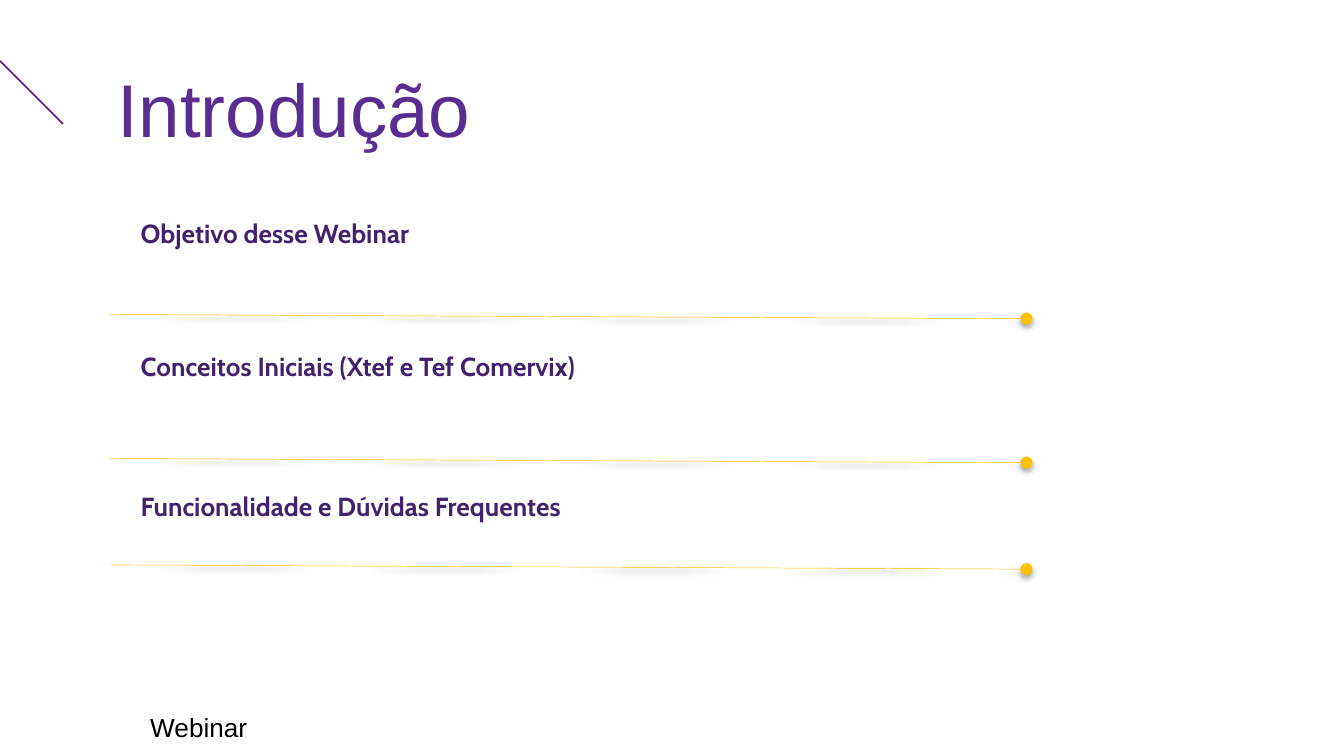
from dataclasses import dataclass

from lxml import etree
from pptx import Presentation
from pptx.dml.color import RGBColor
from pptx.enum.shapes import MSO_CONNECTOR, MSO_SHAPE
from pptx.enum.text import MSO_ANCHOR
from pptx.oxml.ns import qn
from pptx.util import Cm, Pt

STRAIGHT = MSO_CONNECTOR.STRAIGHT
OVAL = MSO_SHAPE.OVAL
TOP, MIDDLE = MSO_ANCHOR.TOP, MSO_ANCHOR.MIDDLE
BLANK_LAYOUT = 6


@dataclass(frozen=True)
class Theme:
    purple: RGBColor = RGBColor(0x5A, 0x2D, 0x91)
    dark_purple: RGBColor = RGBColor(0x43, 0x22, 0x6D)
    yellow: RGBColor = RGBColor(0xFF, 0xC0, 0x00)
    black: RGBColor = RGBColor(0, 0, 0)
    title_size: Pt = Pt(40)
    text_size: Pt = Pt(14)


theme = Theme()
title_format = {"name": "Arial", "size": theme.title_size, "color": theme.purple}
topic_format = {"name": "Cabin", "size": theme.text_size, "bold": True,
                "color": theme.dark_purple}
footer_format = {"name": "Arial", "size": theme.text_size, "color": theme.black}

presentation = Presentation()
presentation.slide_width, presentation.slide_height = Cm(25.4), Cm(14.28)
slide = presentation.slides.add_slide(presentation.slide_layouts[BLANK_LAYOUT])


def add_text(text, left, top, width, height, font_format, anchor=TOP):
    box = slide.shapes.add_textbox(Cm(left), Cm(top), Cm(width), Cm(height))
    box.text_frame.word_wrap = True
    box.text_frame.vertical_anchor = anchor
    paragraph = box.text_frame.paragraphs[0]
    paragraph.text = text
    font = paragraph.runs[0].font
    for attribute, value in font_format.items():
        if attribute == "color":
            font.color.rgb = value
        else:
            setattr(font, attribute, value)


def set_shadow(shape, distance=None, opacity=0):
    """Replace the inherited shadow; without a distance there is none."""
    properties = shape._element.spPr
    for old in properties.findall(qn("a:effectLst")):
        properties.remove(old)
    effects = etree.SubElement(properties, qn("a:effectLst"))
    if distance is not None:
        shadow = etree.SubElement(effects, qn("a:outerShdw"), blurRad=str(Pt(3.1)),
                                  dist=str(Pt(distance)), dir="5400000", rotWithShape="0")
        color = etree.SubElement(shadow, qn("a:srgbClr"), val="000000")
        etree.SubElement(color, qn("a:alpha"), val=str(opacity * 1000))


# Diagonal accent at the left edge
accent = slide.shapes.add_connector(STRAIGHT, Cm(0), Cm(1.15), Cm(1.19), Cm(2.34))
accent.line.color.rgb = theme.purple
accent.line.width = Pt(1)
set_shadow(accent)

# Title and footer
add_text("Introdução", 1.98, 0.94, 14.78, 2.18, title_format, MIDDLE)
add_text("Webinar", 2.59, 13.31, 2.4, 0.86, footer_format)

# Topics, each closed by a thin rule that ends in a dot
dot_left, dot_size, rule_drop = 19.3, 0.2, 0.08
topics = [
    ("Objetivo desse Webinar", 3.99, 5.94),
    ("Conceitos Iniciais (Xtef e Tef Comervix)", 6.5, 8.66),
    ("Funcionalidade e Dúvidas Frequentes", 9.14, 10.67),
]
for topic, text_top, rule_top in topics:
    add_text(topic, 2.41, text_top, 17, 0.86, topic_format)

    rule_end = rule_top + rule_drop
    rule = slide.shapes.add_connector(STRAIGHT, Cm(2.08), Cm(rule_top),
                                      Cm(dot_left), Cm(rule_end))
    rule.line.color.rgb = theme.yellow
    rule.line.width = Pt(0.25)
    set_shadow(rule, 1.6, 38)

    dot = slide.shapes.add_shape(OVAL, Cm(dot_left), Cm(rule_end - dot_size / 2),
                                 Cm(dot_size), Cm(dot_size))
    dot.fill.solid()
    dot.fill.fore_color.rgb = theme.yellow
    dot.line.color.rgb = theme.yellow
    dot.line.width = Pt(0.75)
    set_shadow(dot, 1.8, 35)

presentation.save("out.pptx")
